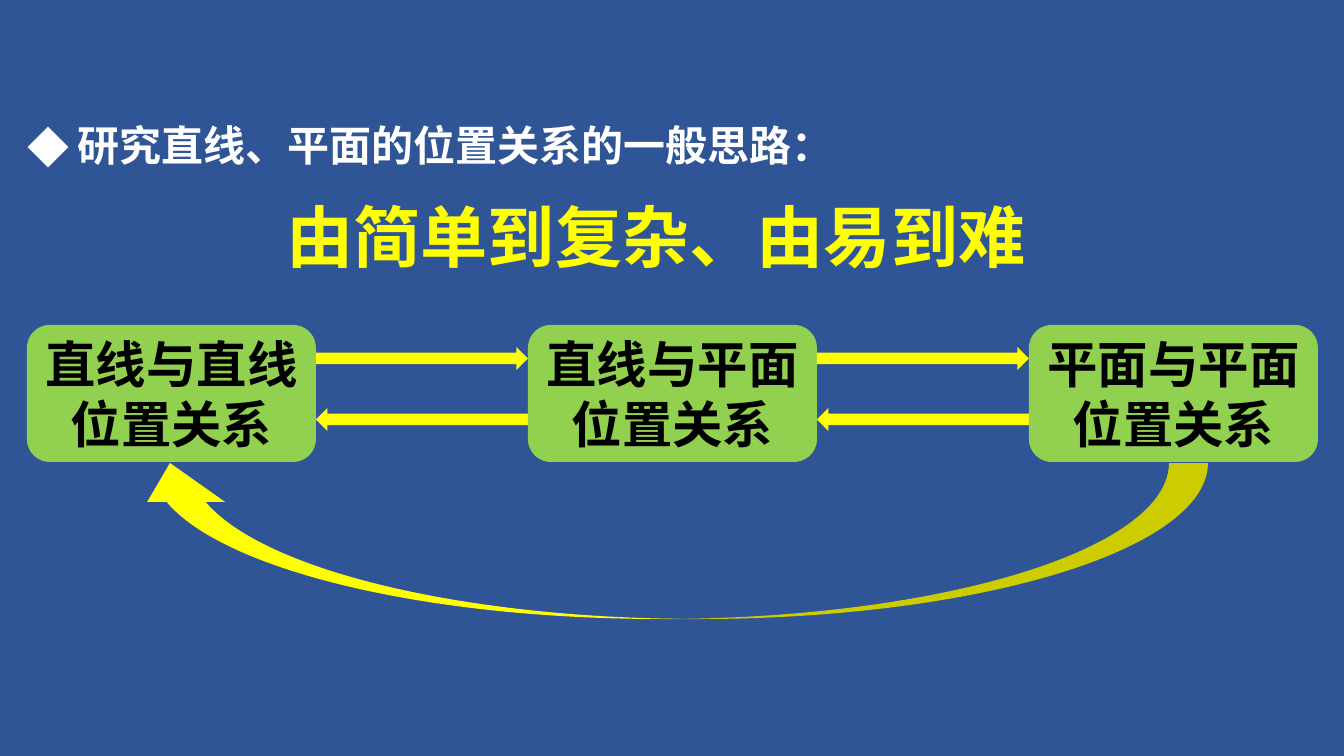
from dataclasses import dataclass

from lxml.etree import SubElement
from pptx import Presentation
from pptx.dml.color import RGBColor as Rgb
from pptx.enum.shapes import MSO_SHAPE as Shape
from pptx.enum.text import MSO_ANCHOR as Anchor, MSO_AUTO_SIZE as AutoSize, PP_ALIGN as Align
from pptx.oxml import parse_xml
from pptx.oxml.ns import nsdecls, qn
from pptx.util import Pt

EMU_PER_PX = 914400 / 100.8


@dataclass(frozen=True)
class Theme:
    font: str = "Noto Sans CJK SC"
    background: str = "2F5597"
    white: str = "FFFFFF"
    black: str = "000000"
    yellow: str = "FFFF00"
    green: str = "92D050"
    outline: str = "5B9BD5"
    lead_size: int = 30
    title_size: int = 48
    box_size: int = 36


THEME = Theme()

BOX_TOPICS = ["直线与直线", "直线与平面", "平面与平面"]
BOX_LEFT, BOX_TOP, BOX_WIDTH, BOX_HEIGHT = 27, 325, 289, 137
BOX_STEP = 501
ARROW_HEIGHT = 23


def px(length):
    return round(length * EMU_PER_PX)


def place(item, left, top, width, height):
    item.left, item.top, item.width, item.height = map(px, (left, top, width, height))


def add_text(para, text, size, color):
    """Add one bold run in the theme font, for Latin and East Asian text."""
    span = para.add_run()
    span.text = text
    font = span.font
    font.name, font.size, font.bold = THEME.font, Pt(size), True
    font.color.rgb = Rgb.from_string(color)
    SubElement(font._element, qn("a:ea")).set("typeface", THEME.font)
    return span


def add_filled_shape(page, kind, color, *bounds):
    shape = page.shapes.add_shape(kind, *map(px, bounds))
    shape.shadow.inherit = False
    shape.fill.solid()
    shape.fill.fore_color.rgb = Rgb.from_string(color)
    shape.line.fill.background()
    return shape


def fill_title(title, text):
    place(title, 275, 190, 762, 92)
    frame = title.text_frame
    frame.word_wrap, frame.auto_size = False, AutoSize.NONE
    frame.vertical_anchor = Anchor.TOP
    para = frame.paragraphs[0]
    para.alignment = Align.CENTER
    span = add_text(para, text, THEME.title_size, THEME.yellow)
    # Thin outline around the letters
    span.font._element.insert(0, parse_xml(
        f'<a:ln {nsdecls("a")} w="10160"><a:solidFill>'
        f'<a:srgbClr val="{THEME.outline}"/></a:solidFill></a:ln>'))


def fill_lead(body, text):
    place(body, 17, 89, 837, 87)
    frame = body.text_frame
    frame.word_wrap, frame.auto_size = True, AutoSize.NONE
    frame.vertical_anchor = Anchor.MIDDLE
    para = frame.paragraphs[0]
    para.line_spacing, para.space_before = 1.5, Pt(0)
    # Diamond bullet with a hanging indent
    settings = para._p.get_or_add_pPr()
    settings.set("marL", "457200")
    settings.set("indent", "-457200")
    SubElement(settings, qn("a:buFont")).set("typeface", THEME.font)
    SubElement(settings, qn("a:buChar")).set("char", "◆")
    add_text(para, text, THEME.lead_size, THEME.white)


def add_topic_box(page, left, topic):
    box = add_filled_shape(page, Shape.ROUNDED_RECTANGLE, THEME.green,
                           left, BOX_TOP, BOX_WIDTH, BOX_HEIGHT)
    frame = box.text_frame
    frame.word_wrap, frame.vertical_anchor = True, Anchor.MIDDLE
    for index, text in enumerate([topic, "位置关系"]):
        para = frame.add_paragraph() if index else frame.paragraphs[0]
        para.alignment = Align.CENTER
        add_text(para, text, THEME.box_size, THEME.black)


def add_arrow_pair(page, left):
    """Forward and backward arrows across the gap between two boxes."""
    for kind, top in [(Shape.RIGHT_ARROW, 347), (Shape.LEFT_ARROW, 408)]:
        add_filled_shape(page, kind, THEME.yellow,
                         left, top, BOX_STEP - BOX_WIDTH, ARROW_HEIGHT)


def add_return_arrow(page):
    arrow = add_filled_shape(page, Shape.CURVED_UP_ARROW, THEME.yellow,
                             131, 463, 1077, 156)
    arrow._element.spPr.xfrm.set("flipH", "1")


def main():
    deck = Presentation()
    deck.slide_width, deck.slide_height = px(1344), px(756)
    page = deck.slides.add_slide(deck.slide_layouts[1])
    page.background.fill.solid()
    page.background.fill.fore_color.rgb = Rgb.from_string(THEME.background)

    # Heading texts
    fill_lead(page.placeholders[1], "研究直线、平面的位置关系的一般思路：")
    fill_title(page.shapes.title, "由简单到复杂、由易到难")

    # Row of topics, with arrows in the gaps
    for index, topic in enumerate(BOX_TOPICS):
        left = BOX_LEFT + index * BOX_STEP
        add_topic_box(page, left, topic)
        if index < len(BOX_TOPICS) - 1:
            add_arrow_pair(page, left + BOX_WIDTH)

    # Way back from the last topic to the first
    add_return_arrow(page)
    deck.save("out.pptx")


if __name__ == "__main__":
    main()
